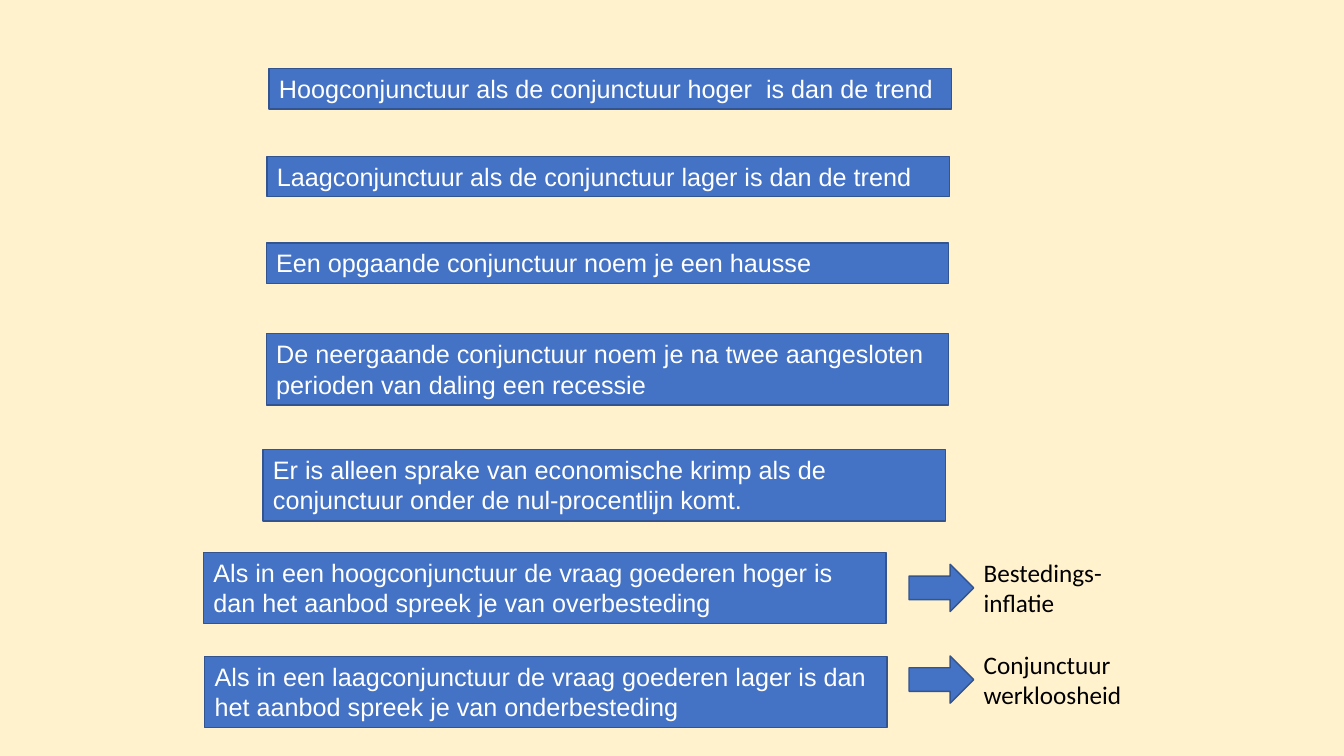
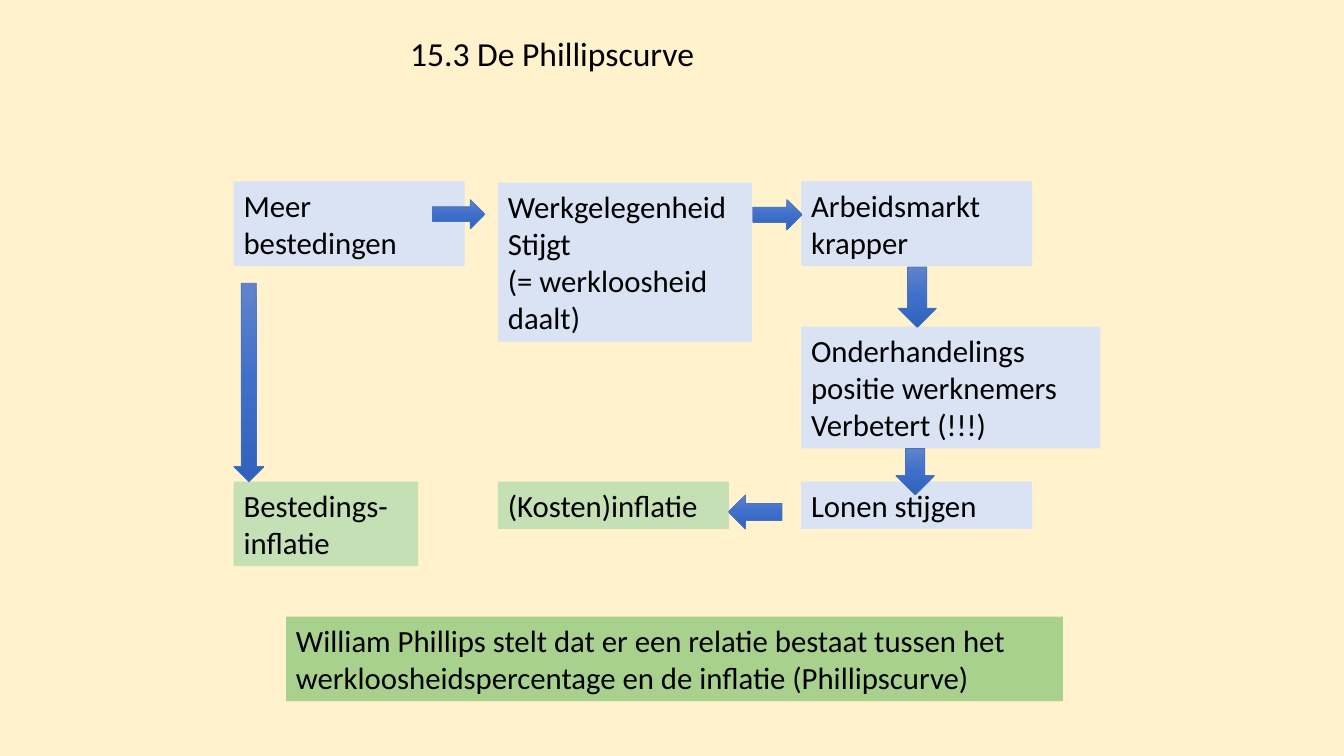
from copy import deepcopy
from pptx import Presentation
from pptx.dml.color import RGBColor
from pptx.enum.shapes import MSO_SHAPE
from pptx.enum.text import MSO_ANCHOR, MSO_AUTO_SIZE, PP_ALIGN
from pptx.oxml.ns import qn
from pptx.util import Cm, Pt

CREAM = RGBColor(0xFF, 0xF2, 0xCC)
BLUE = RGBColor(0x44, 0x72, 0xC4)
NAVY = RGBColor(0x32, 0x54, 0x91)
PALE = RGBColor(0xDA, 0xE3, 0xF3)
MINT = RGBColor(0xC5, 0xE0, 0xB4)
GREEN = RGBColor(0xA9, 0xD1, 0x8E)
WHITE = RGBColor(0xFF, 0xFF, 0xFF)
BLACK = RGBColor(0x00, 0x00, 0x00)
SHADES = (
    (0, RGBColor(0x61, 0x83, 0xCB)),
    (0.5, RGBColor(0x3E, 0x70, 0xCA)),
    (1, RGBColor(0x30, 0x62, 0xBB)),
)
RIGHT = MSO_SHAPE.RIGHT_ARROW
DOWN = MSO_SHAPE.DOWN_ARROW
LEFT = MSO_SHAPE.LEFT_ARROW


class Deck:
    def __init__(self):
        self.prs = Presentation()
        self.prs.slide_width = Cm(33.87)
        self.prs.slide_height = Cm(19.05)
        fill = self.prs.slide_master.background.fill
        fill.solid()
        fill.fore_color.rgb = CREAM
        self.slide = None

    def start(self, title=None):
        layout = self.prs.slide_layouts[5 if title else 6]
        self.slide = self.prs.slides.add_slide(layout)
        if title:
            head = self.slide.shapes.title
            head.left, head.top = Cm(10.08), Cm(0.69)
            head.width, head.height = Cm(14.83), Cm(1.27)
            self.text(head, [title], 24)

    def text(self, shape, lines, size, font="Calibri", color=BLACK):
        frame = shape.text_frame
        frame.word_wrap = True
        frame.auto_size = MSO_AUTO_SIZE.SHAPE_TO_FIT_TEXT
        frame.vertical_anchor = MSO_ANCHOR.TOP
        for i, line in enumerate(lines):
            para = frame.add_paragraph() if i else frame.paragraphs[0]
            para.alignment = PP_ALIGN.LEFT
            run = para.add_run()
            run.text = line
            run.font.name = font
            run.font.size = Pt(size)
            run.font.color.rgb = color

    def shape(self, kind, area, fill=None, line=None, width=1):
        item = self.slide.shapes.add_shape(kind, *map(Cm, area))
        item.shadow.inherit = False
        if fill is not None:
            item.fill.solid()
            item.fill.fore_color.rgb = fill
        if line is None:
            item.line.fill.background()
        else:
            item.line.color.rgb = line
            item.line.width = Pt(width)
        return item

    def bar(self, left, top, height, text):
        item = self.shape(MSO_SHAPE.RECTANGLE, (left, top, 17.2, height), BLUE, NAVY)
        self.text(item, [text], 18, "Arial", WHITE)

    def box(self, area, fill, *lines):
        self.text(self.shape(MSO_SHAPE.RECTANGLE, area, fill), lines, 22)

    def label(self, area, *lines):
        self.text(self.slide.shapes.add_textbox(*map(Cm, area)), lines, 18)

    def arrow(self, kind, *area):
        item = self.shape(kind, area, line=BLUE, width=0.5)
        item.fill.gradient()
        item.fill.gradient_angle = 270
        stops = item.element.spPr.find(qn("a:gradFill")).find(qn("a:gsLst"))
        stops.insert(1, deepcopy(stops[0]))
        for stop, (pos, color) in zip(item.fill.gradient_stops, SHADES):
            stop.position = pos
            stop.color.rgb = color


def terms(deck):
    deck.start()
    one, two = 1.02, 1.8
    for bar in (
        (6.78, 1.73, one, "Hoogconjunctuur als de conjunctuur hoger  is dan de trend"),
        (6.73, 3.94, one, "Laagconjunctuur als de conjunctuur lager is dan de trend"),
        (6.71, 6.12, one, "Een opgaande conjunctuur noem je een hausse"),
        (6.71, 8.41, two, "De neergaande conjunctuur noem je na twee aangesloten perioden van daling een recessie"),
        (6.63, 11.33, two, "Er is alleen sprake van economische krimp als de conjunctuur onder de nul-procentlijn komt."),
        (5.13, 13.92, two, "Als in een hoogconjunctuur de vraag goederen hoger is dan het aanbod spreek je van overbesteding"),
        (5.16, 16.54, two, "Als in een laagconjunctuur de vraag goederen lager is dan het aanbod spreek je van onderbesteding"),
    ):
        deck.bar(*bar)
    for top, lines in (
        (13.92, ("Bestedings-", "inflatie")),
        (16.23, ("Conjunctuur", "werkloosheid")),
    ):
        deck.shape(RIGHT, (22.91, top + 0.3, 1.63, 1.19), BLUE, NAVY)
        deck.label((24.54, top, 4.39, two), *lines)


def curve(deck):
    deck.start("15.3 De Phillipscurve")
    near, mid, far = 5.89, 12.55, 20.19
    top, low = 4.57, 12.14
    wide, one, two = 5.82, 1.19, 2.13
    deck.box((near, top, wide, two), PALE, "Meer bestedingen")
    deck.box((mid, 4.6, 6.4, 4.01), PALE,
             "Werkgelegenheid", "Stijgt", "(= werkloosheid daalt)")
    deck.box((far, top, wide, two), PALE, "Arbeidsmarkt krapper")
    deck.box((far, 8.23, 7.54, 3.07), PALE,
             "Onderhandelings positie werknemers", "Verbetert (!!!)")
    deck.box((far, low, wide, one), PALE, "Lonen stijgen")
    deck.box((mid, low, wide, one), MINT, "(Kosten)inflatie")
    deck.box((near, low, 4.65, two), MINT, "Bestedings-inflatie")
    deck.box((7.21, 15.54, 19.58, two), GREEN,
             "William Phillips stelt dat er een relatie bestaat tussen het "
             "werkloosheidspercentage en de inflatie (Phillipscurve)")
    for arrow in (
        (RIGHT, 10.9, 5.03, 1.32, 0.74),
        (RIGHT, 18.97, 5.03, 1.24, 0.76),
        (DOWN, 22.63, 6.73, 0.97, 1.52),
        (DOWN, 22.58, 11.3, 0.97, 1.17),
        (LEFT, 18.36, 12.47, 1.35, 0.86),
        (DOWN, near, 7.14, 0.76, 5),
    ):
        deck.arrow(*arrow)


def main():
    deck = Deck()
    terms(deck)
    curve(deck)
    deck.prs.save("out.pptx")


if __name__ == "__main__":
    main()
